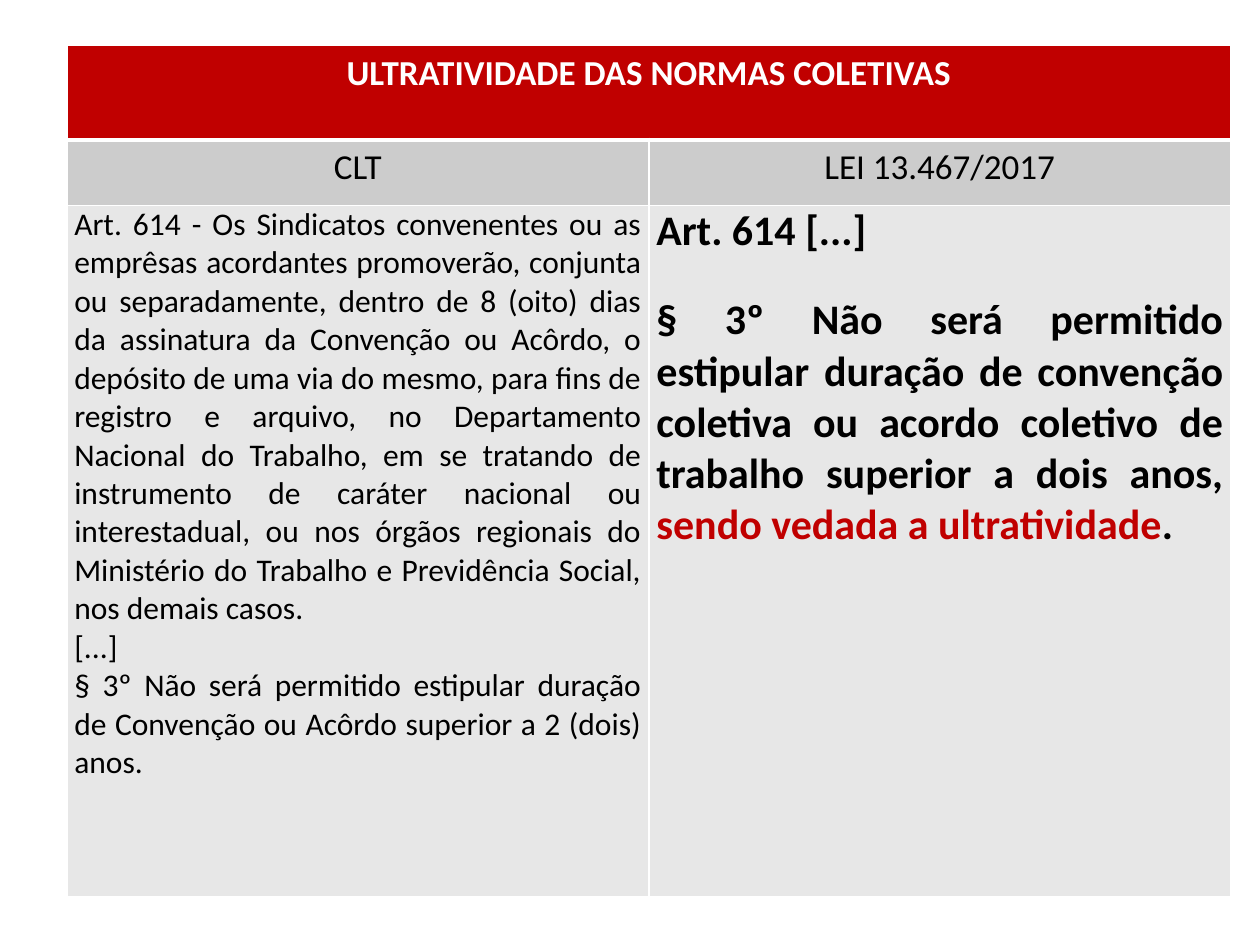
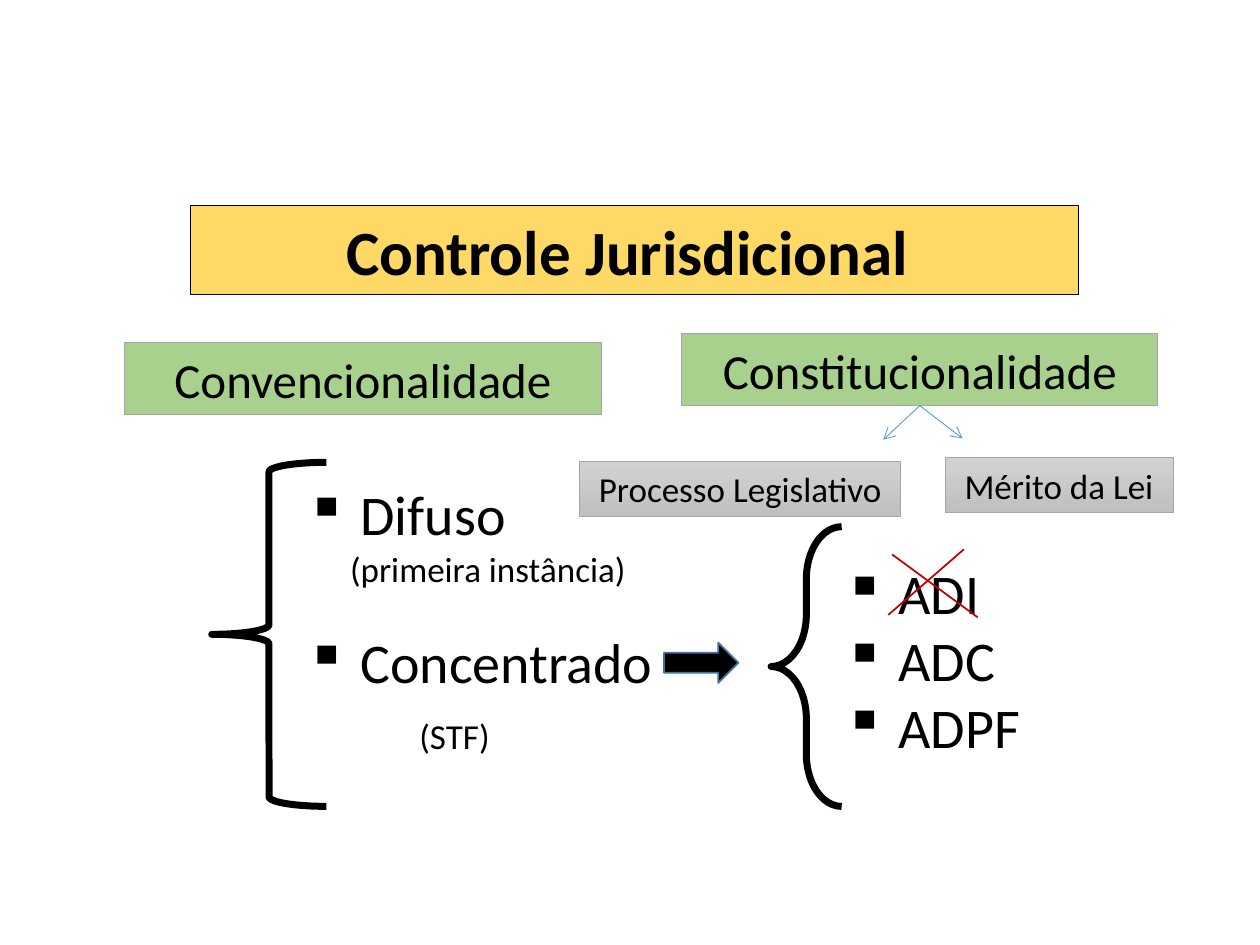
import lxml.etree
import pptx
import pptx.dml.color
import pptx.enum.shapes
import pptx.enum.text
import pptx.oxml.ns
import pptx.util

PX = 9144  # EMU per px, 100 px to the inch
SHAPE = pptx.enum.shapes.MSO_SHAPE
ALIGN = pptx.enum.text.PP_ALIGN
qn = pptx.oxml.ns.qn


class Theme:
    font = "Calibri"
    black, white, red = "000000", "FFFFFF", "C00000"
    gold, green, gray = "FFD966", "A9D18E", "A5A5A5"
    head, body = "CCCCCC", "E7E7E7"
    fade = ("D2D2D2", "C0C0C0")
    blue, navy = "5B9BD5", "43739E"
    title, item, label, law, note, text = 36, 32, 28, 24, 20, 18
    hair, thin, rule, brace = 0.5, 1, 3, 4


def rgb(code):
    return pptx.dml.color.RGBColor.from_string(code)


def px(*nums):
    return [pptx.util.Emu(num * PX) for num in nums]


def child(node, tag, **attrs):
    return lxml.etree.SubElement(node, qn(tag), **attrs)


class Deck:
    def __init__(self, theme):
        self.theme = theme
        self.prs = pptx.Presentation()
        self.prs.slide_width, self.prs.slide_height = px(1000, 750)

    def page(self):
        self.slide = self.prs.slides.add_slide(self.prs.slide_layouts[6])

    def run(self, para, text, size, color=Theme.black, bold=False):
        run = para.add_run()
        run.text = text
        font = run.font
        font.name, font.size, font.bold = self.theme.font, pptx.util.Pt(size), bold
        font.color.rgb = rgb(color)

    def para(self, frame, first, align=None, gap=0, lines=None):
        para = frame.paragraphs[0] if first else frame.add_paragraph()
        para.alignment = align
        if gap:
            para.space_before = pptx.util.Pt(gap)
        if lines:
            para.line_spacing = lines
        return para

    def shape(self, kind, box, fill=None, line=Theme.black, width=Theme.hair):
        shape = self.slide.shapes.add_shape(kind, *px(*box))
        shape.shadow.inherit = False
        if fill is None:
            shape.fill.background()
        elif isinstance(fill, tuple):
            shape.fill.gradient()
            shape.fill.gradient_angle = 270
            for stop, color in zip(shape.fill.gradient_stops, fill):
                stop.color.rgb = rgb(color)
        else:
            shape.fill.solid()
            shape.fill.fore_color.rgb = rgb(fill)
        shape.line.color.rgb = rgb(line)
        shape.line.width = pptx.util.Pt(width)
        return shape

    def label(self, box, text, size, fill, line=Theme.gray, bold=False):
        shape = self.shape(SHAPE.RECTANGLE, box, fill, line)
        shape.text_frame.word_wrap = True
        para = self.para(shape.text_frame, True, ALIGN.CENTER)
        self.run(para, text, size, bold=bold)
        return shape

    def items(self, box, rows):
        """Rows are (text, gap, indent); an indent makes a small note, none a bullet."""
        frame = self.slide.shapes.add_textbox(*px(*box)).text_frame
        frame.word_wrap = True
        for num, (text, gap, indent) in enumerate(rows):
            para = self.para(frame, num == 0, gap=gap)
            props = para._p.get_or_add_pPr()
            left = indent or 10
            props.set("marL", str(left * PX))
            props.set("indent", str(0 if indent else -left * PX))
            if not indent:
                child(props, "a:buChar", char="▪")
                text = " " + text
            self.run(para, text, self.theme.note if indent else self.theme.item)

    def line(self, start, end, color, width, arrow=False, source=None):
        line = self.slide.shapes.add_connector(
            pptx.enum.shapes.MSO_CONNECTOR.STRAIGHT, *px(*start, *end))
        if source is not None:
            line.begin_connect(source, 2)
        line.line.color.rgb = rgb(color)
        line.line.width = pptx.util.Pt(width)
        if arrow:
            child(line.line._get_or_add_ln(), "a:tailEnd", type="arrow")
        child(line._element.spPr, "a:effectLst")

    def table(self, box, cols, rows):
        frame = self.slide.shapes.add_table(len(rows), len(cols), *px(*box))
        table = frame.table
        table.first_row = table.horz_banding = False
        for col, width in zip(table.columns, px(*cols)):
            col.width = width
        for row, height in zip(table.rows, px(*rows)):
            row.height = height
        return table

    def cell(self, cell, fill, paras, top=Theme.thin, bottom=Theme.thin):
        """Paras are (options, runs), with the arguments of para and run."""
        cell.margin_left, cell.margin_right = px(6, 6)
        cell.margin_top = cell.margin_bottom = 0
        props = cell._tc.get_or_add_tcPr()
        sides = {"L": self.theme.thin, "R": self.theme.thin, "T": top, "B": bottom}
        for side, width in sides.items():
            edge = child(props, "a:ln" + side, w=str(pptx.util.Pt(width)))
            child(child(edge, "a:solidFill"), "a:srgbClr", val=self.theme.white)
        cell.fill.solid()
        cell.fill.fore_color.rgb = rgb(fill)
        for num, (opts, runs) in enumerate(paras):
            para = self.para(cell.text_frame, num == 0, **opts)
            for run in runs:
                self.run(para, *run)


def norms(deck):
    look = deck.theme
    deck.page()
    table = deck.table((53, 36, 924, 676), (462, 462), (75, 52, 549))
    center = {"align": ALIGN.CENTER, "lines": 1.15}
    just = {"align": ALIGN.JUSTIFY}

    title = table.cell(0, 0)
    title.merge(table.cell(0, 1))
    deck.cell(title, look.red, [(center, [
        ("ULTRATIVIDADE DAS NORMAS COLETIVAS", look.note, look.white, True)])],
        bottom=look.rule)
    for col, name in enumerate(("CLT", "LEI 13.467/2017")):
        deck.cell(table.cell(1, col), look.head,
                  [(center, [(name, look.note)])], top=look.rule)

    old = (
        "Art. 614 - Os Sindicatos convenentes ou as emprêsas acordantes "
        "promoverão, conjunta ou separadamente, dentro de 8 (oito) dias da "
        "assinatura da Convenção ou Acôrdo, o depósito de uma via do mesmo, "
        "para fins de registro e arquivo, no Departamento Nacional do "
        "Trabalho, em se tratando de instrumento de caráter nacional ou "
        "interestadual, ou nos órgãos regionais do Ministério do Trabalho e "
        "Previdência Social, nos demais casos.",
        "[...]",
        "§ 3º Não será permitido estipular duração de Convenção ou Acôrdo "
        "superior a 2 (dois) anos.",
    )
    deck.cell(table.cell(2, 0), look.body,
              [(just, [(text, look.text)]) for text in old])
    deck.cell(table.cell(2, 1), look.body, [
        (just, [("Art. 614 [...]", look.law, look.black, True)]),
        (just | {"gap": 22}, [
            ("§ 3º Não será permitido estipular duração de convenção coletiva "
             "ou acordo coletivo de trabalho superior a dois anos, ",
             look.law, look.black, True),
            ("sendo vedada a ultratividade", look.law, look.red, True),
            (".", look.law, look.black, True)]),
    ])


def control(deck):
    look = deck.theme
    deck.page()
    deck.label((151, 163, 705, 71), "Controle Jurisdicional ", look.title,
               look.gold, look.black, True)

    deck.shape(SHAPE.LEFT_BRACE, (168, 367, 91, 273), width=look.brace)
    deck.items((233, 376, 310, 236), [
        ("Difuso", 0, 0), ("(primeira instância)", 0, 35),
        ("Concentrado", 22, 0), ("(STF)", 11, 90)])
    deck.shape(SHAPE.RIGHT_ARROW, (527, 510, 59, 32), look.black, look.navy,
               look.thin)
    brace = deck.shape(SHAPE.LEFT_BRACE, (612, 418, 56, 222), width=look.brace)
    brace.adjustments[0] = 0.74
    deck.items((660, 438, 176, 172),
               [(name, 0, 0) for name in ("ADI", "ADC", "ADPF")])

    root = deck.label((541, 265, 378, 57), "Constitucionalidade", look.label,
                      look.green)
    deck.label((99, 272, 378, 57), "Convencionalidade", look.label, look.green)
    deck.label((460, 366, 255, 44), "Processo Legislativo", look.note, look.fade)
    deck.label((750, 363, 181, 44), "Mérito da Lei", look.note, look.fade)
    for end in ((701, 349), (764, 348)):
        deck.line((730, 322), end, look.blue, look.hair, True, root)
    for start, end in (((708, 440), (776, 490)), ((705, 488), (765, 436))):
        deck.line(start, end, look.red, look.thin)


def main():
    deck = Deck(Theme)
    norms(deck)
    control(deck)
    deck.prs.save("out.pptx")


if __name__ == "__main__":
    main()
